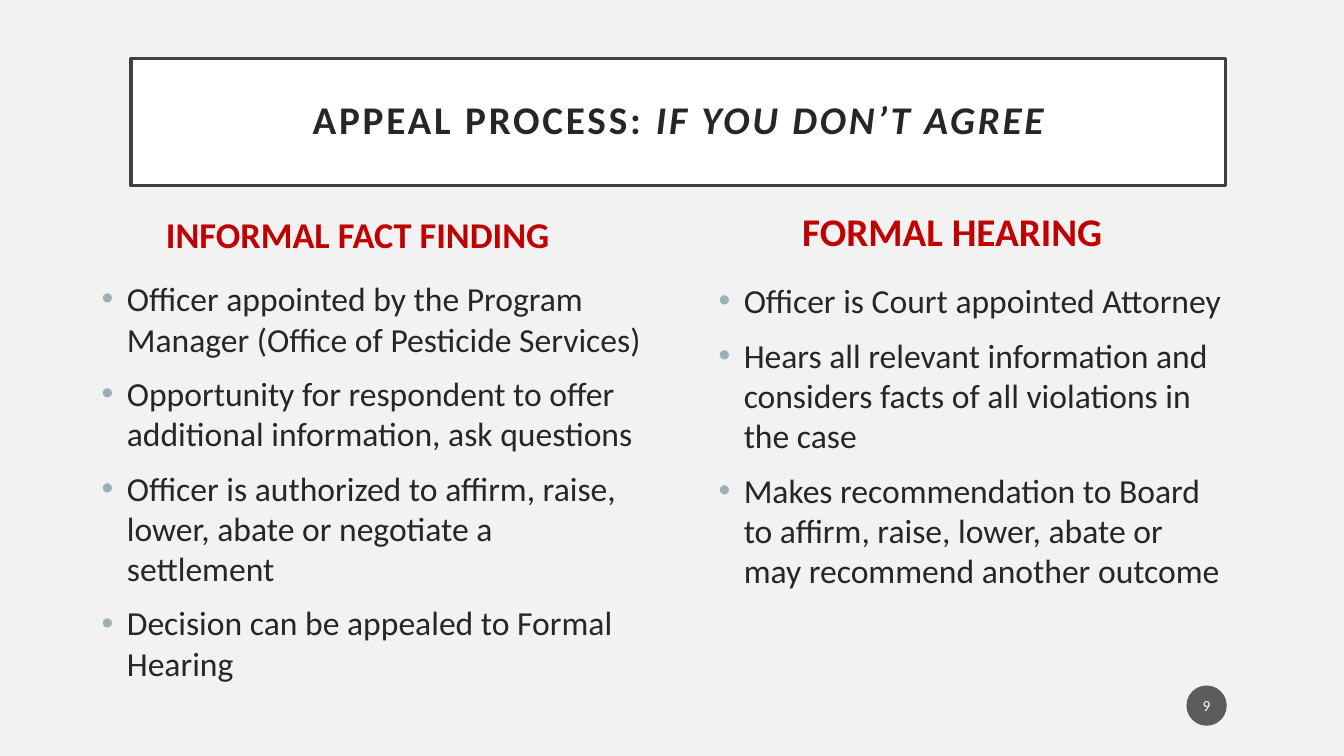
from dataclasses import dataclass

from lxml.etree import SubElement
from pptx import Presentation
from pptx.dml.color import RGBColor
from pptx.enum.shapes import MSO_SHAPE
from pptx.enum.text import MSO_ANCHOR, PP_ALIGN
from pptx.oxml.ns import qn
from pptx.util import Inches, Pt

WIDTH, HEIGHT = Inches(13.333), Inches(7.5)
FONT = "Calibri"
INK, RED, WHITE = "262626", "C00000", "FFFFFF"


@dataclass(frozen=True)
class Box:
    """Left, top, width and height in percent of the slide."""
    left: float
    top: float
    width: float
    height: float

    def emu(self) -> tuple[int, ...]:
        return tuple(round(share * side / 100) for share, side in (
            (self.left, WIDTH), (self.top, HEIGHT),
            (self.width, WIDTH), (self.height, HEIGHT)))


@dataclass(frozen=True)
class Column:
    heading: str
    heading_size: float
    heading_box: Box
    points: tuple[str, ...]
    points_box: Box


COLUMNS = (
    Column("INFORMAL FACT FINDING ", 25.9, Box(7.58, 26.27, 38.7, 9.47), (
        "Officer appointed by the Program Manager (Office of Pesticide Services)",
        "Opportunity for respondent to offer additional information, ask questions",
        "Officer is authorized to affirm, raise, lower, abate or negotiate a settlement",
        "Decision can be appealed to Formal Hearing",
    ), Box(6.83, 36.13, 41.63, 51.87)),
    Column("FORMAL HEARING", 28, Box(52.73, 26.13, 36.23, 8.93), (
        "Officer is Court appointed Attorney",
        "Hears all relevant information and considers facts of all violations in the case",
        "Makes recommendation to Board to affirm, raise, lower, abate or "
        "may recommend another outcome",
    ), Box(52.73, 36.4, 39.38, 53.33)),
)


def rgb(color: str) -> RGBColor:
    return RGBColor.from_string(color)


def add_run(p, text: str, size: float, color: str, bold=False, italic=False):
    r = p.add_run()
    r.text = text
    f = r.font
    f.name, f.size, f.bold, f.italic = FONT, Pt(size), bold, italic
    f.color.rgb = rgb(color)
    return r


def add_bullet(p) -> None:
    """Give the paragraph a hanging indent and a grey-blue bullet."""
    pPr = p._p.get_or_add_pPr()
    pPr.set("marL", str(Inches(0.25)))
    pPr.set("indent", str(-Inches(0.25)))
    color = SubElement(pPr, qn("a:buClr"))
    SubElement(color, qn("a:srgbClr"), val="9BAFB5")
    SubElement(pPr, qn("a:buFont"), typeface="Arial")
    SubElement(pPr, qn("a:buChar"), char="•")


def add_text_box(s, box: Box, anchor: MSO_ANCHOR):
    tf = s.shapes.add_textbox(*box.emu()).text_frame
    tf.word_wrap = True
    tf.vertical_anchor = anchor
    return tf


def add_shape(s, kind: MSO_SHAPE, box: Box, fill: str, inset_x: float, inset_y: float):
    """Add a filled, shadowless shape with one centred paragraph."""
    sp = s.shapes.add_shape(kind, *box.emu())
    sp.shadow.inherit = False
    sp.fill.solid()
    sp.fill.fore_color.rgb = rgb(fill)
    tf = sp.text_frame
    tf.word_wrap = True
    tf.vertical_anchor = MSO_ANCHOR.MIDDLE
    tf.margin_left = tf.margin_right = Inches(inset_x)
    tf.margin_top = tf.margin_bottom = Inches(inset_y)
    tf.paragraphs[0].alignment = PP_ALIGN.CENTER
    return sp


def add_title(s) -> None:
    sp = add_shape(s, MSO_SHAPE.RECTANGLE, Box(9.75, 7.73, 81.45, 16.8), WHITE, 0.2, 0.2)
    sp.line.color.rgb = rgb("404040")
    sp.line.width = Pt(2.5)
    p = sp.text_frame.paragraphs[0]
    p.line_spacing = 0.9
    for text, italic in (("APPEAL PROCESS: ", False), ("IF YOU DON’T AGREE", True)):
        r = add_run(p, text, 28, INK, bold=True, italic=italic)
        r.font._element.set("spc", "200")


def add_column(s, column: Column) -> None:
    p = add_text_box(s, column.heading_box, MSO_ANCHOR.MIDDLE).paragraphs[0]
    p.alignment = PP_ALIGN.CENTER
    p.space_before = Pt(10)
    add_run(p, column.heading, column.heading_size, RED, bold=True)

    tf = add_text_box(s, column.points_box, MSO_ANCHOR.TOP)
    for i, point in enumerate(column.points):
        p = tf.add_paragraph() if i else tf.paragraphs[0]
        p.space_before = Pt(10)
        add_bullet(p)
        add_run(p, point, 24, INK)


def add_page_number(s) -> None:
    sp = add_shape(s, MSO_SHAPE.OVAL, Box(88.28, 90.67, 3, 5.33), "1D1D1D", 0.02, 0.05)
    sp.line.fill.background()
    color = sp._element.spPr.find(qn("a:solidFill")).find(qn("a:srgbClr"))
    SubElement(color, qn("a:alpha"), val="70000")
    add_run(sp.text_frame.paragraphs[0], "9", 11, WHITE)


def main() -> None:
    prs = Presentation()
    prs.slide_width, prs.slide_height = WIDTH, HEIGHT
    s = prs.slides.add_slide(prs.slide_layouts[6])
    s.background.fill.solid()
    s.background.fill.fore_color.rgb = rgb("F2F2F2")
    add_title(s)
    for column in COLUMNS:
        add_column(s, column)
    add_page_number(s)
    prs.save("out.pptx")


if __name__ == "__main__":
    main()
